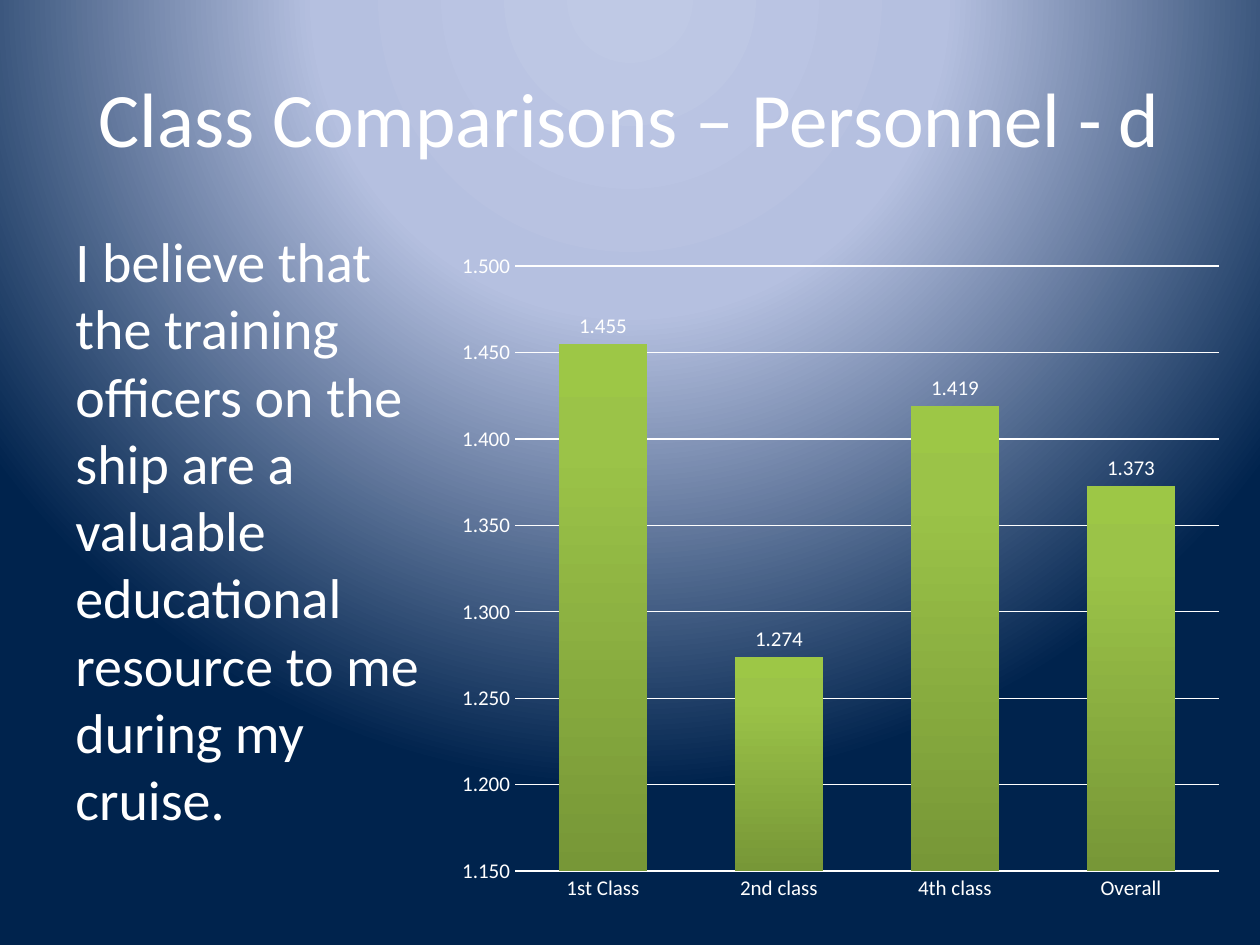
from dataclasses import dataclass

from lxml.etree import SubElement, _Element
from pptx import Presentation
from pptx.chart.axis import _BaseAxis
from pptx.chart.data import CategoryChartData
from pptx.dml.color import RGBColor
from pptx.enum.chart import XL_CHART_TYPE, XL_LABEL_POSITION, XL_TICK_MARK
from pptx.enum.text import MSO_ANCHOR, PP_ALIGN
from pptx.oxml import parse_xml
from pptx.oxml.ns import nsdecls, qn
from pptx.slide import Slide
from pptx.text.text import Font
from pptx.util import Pt

WHITE = RGBColor(0xFF, 0xFF, 0xFF)
SKY = RGBColor(0xBF, 0xC9, 0xE5)
HAZE = RGBColor(0xB5, 0xC0, 0xE0)
NAVY = RGBColor(0x00, 0x23, 0x4D)
OLIVE = RGBColor(0x77, 0x97, 0x37)
GREEN = RGBColor(0x9B, 0xC3, 0x48)
LIME = RGBColor(0x9D, 0xC7, 0x46)

FONT = "Calibri"
NUMBER_FORMAT = "0.000"
SPOTLIGHT = (
    '<a:path path="circle">'
    '<a:fillToRect l="50000" t="-80000" r="50000" b="180000"/></a:path>'
)
UPWARD = '<a:lin ang="16200000" scaled="0"/>'

SCORES = {"1st Class": 1.455, "2nd class": 1.274, "4th class": 1.419, "Overall": 1.373}


@dataclass(frozen=True)
class TextBlock:
    """A text box with one paragraph, measured in points."""

    text: str
    left: float
    top: float
    width: float
    height: float
    size: float
    align: PP_ALIGN
    anchor: MSO_ANCHOR


BLOCKS = [
    TextBlock("Class Comparisons – Personnel - d", 36, 21.6, 648, 90, 44,
              PP_ALIGN.CENTER, MSO_ANCHOR.MIDDLE),
    TextBlock("I believe that the training officers on the ship are a valuable "
              "educational resource to me during my cruise.", 36, 126, 221.76, 356.4, 32,
              PP_ALIGN.LEFT, MSO_ANCHOR.TOP),
]


def style_font(font: Font, size: float) -> None:
    """Apply the slide's typeface and colour."""
    font.name = FONT
    font.size = Pt(size)
    font.color.rgb = WHITE


def set_gradient(parent: _Element, stops: dict[int, RGBColor], direction: str) -> None:
    """Replace the solid fill in parent with a gradient."""
    gs = "".join(
        f'<a:gs pos="{pos * 1000}"><a:srgbClr val="{color}"/></a:gs>'
        for pos, color in stops.items()
    )
    gradient = parse_xml(
        f'<a:gradFill {nsdecls("a")} rotWithShape="1">'
        f"<a:gsLst>{gs}</a:gsLst>{direction}</a:gradFill>"
    )
    parent.replace(parent.find(qn("a:solidFill")), gradient)


def add_text(s: Slide, block: TextBlock) -> None:
    """Draw one text block."""
    sp = s.shapes.add_textbox(Pt(block.left), Pt(block.top), Pt(block.width), Pt(block.height))
    tf = sp.text_frame
    tf.word_wrap = True
    tf.vertical_anchor = block.anchor
    p = tf.paragraphs[0]
    p.text = block.text
    p.alignment = block.align
    style_font(p.font, block.size)


def style_axis(axis: _BaseAxis) -> None:
    """Set the tick marks and label font of an axis."""
    axis.major_tick_mark = XL_TICK_MARK.NONE
    axis.minor_tick_mark = XL_TICK_MARK.NONE
    style_font(axis.tick_labels.font, 12)


def set_plot_layout(plot_area: _Element, x: float, y: float, w: float, h: float) -> None:
    """Place the inner plot area as fractions of the chart."""
    for old in plot_area.findall(qn("c:layout")):
        plot_area.remove(old)
    layout = parse_xml(f'<c:layout {nsdecls("c")}/>')
    manual = SubElement(layout, qn("c:manualLayout"))
    settings = {"layoutTarget": "inner", "xMode": "edge", "yMode": "edge",
                "x": x, "y": y, "w": w, "h": h}
    for tag, value in settings.items():
        SubElement(manual, qn(f"c:{tag}")).set("val", str(value))
    plot_area.insert(0, layout)


def add_score_chart(s: Slide) -> None:
    """Draw the column chart of class scores."""
    data = CategoryChartData(number_format=NUMBER_FORMAT)
    data.categories = list(SCORES)
    data.add_series("Series 1", list(SCORES.values()))
    chart = s.shapes.add_chart(
        XL_CHART_TYPE.COLUMN_CLUSTERED, Pt(252), Pt(139), Pt(450), Pt(383), data
    ).chart
    chart.has_title = False
    chart.has_legend = False
    style_font(chart.font, 10)

    style_axis(chart.category_axis)
    line = chart.category_axis.format.line
    line.color.rgb = WHITE
    line.width = Pt(1)

    axis = chart.value_axis
    style_axis(axis)
    axis.minimum_scale, axis.maximum_scale, axis.major_unit = 1.15, 1.5, 0.05
    axis.tick_labels.number_format = NUMBER_FORMAT
    axis.tick_labels.number_format_is_linked = False
    axis.format.line.fill.background()
    grid = axis.major_gridlines.format.line
    grid.color.rgb = WHITE
    grid.width = Pt(0.75)

    plot = chart.plots[0]
    plot.gap_width = 100
    plot.overlap = -24
    plot.vary_by_categories = False
    plot.has_data_labels = True
    labels = plot.data_labels
    labels.show_value = True
    labels.position = XL_LABEL_POSITION.OUTSIDE_END
    labels.number_format = NUMBER_FORMAT
    labels.number_format_is_linked = False
    style_font(labels.font, 12)

    plot.series[0].format.fill.solid()
    plot.series[0].format.fill.fore_color.rgb = GREEN
    plot_area = chart.element.find(f".//{qn('c:plotArea')}")
    bars = plot_area.find(f".//{qn('c:ser')}/{qn('c:spPr')}")
    set_gradient(bars, {0: OLIVE, 80: GREEN, 100: LIME}, UPWARD)
    set_plot_layout(plot_area, 0.094, 0.034, 0.894, 0.903)


def main() -> None:
    """Build and save the slide."""
    prs = Presentation()
    prs.slide_width, prs.slide_height = Pt(720), Pt(540)
    s = prs.slides.add_slide(prs.slide_layouts[6])
    s.background.fill.solid()
    s.background.fill.fore_color.rgb = NAVY
    background = s.element.find(f".//{qn('p:bgPr')}")
    set_gradient(background, {0: SKY, 40: HAZE, 100: NAVY}, SPOTLIGHT)
    for block in BLOCKS:
        add_text(s, block)
    add_score_chart(s)
    prs.save("out.pptx")


if __name__ == "__main__":
    main()
